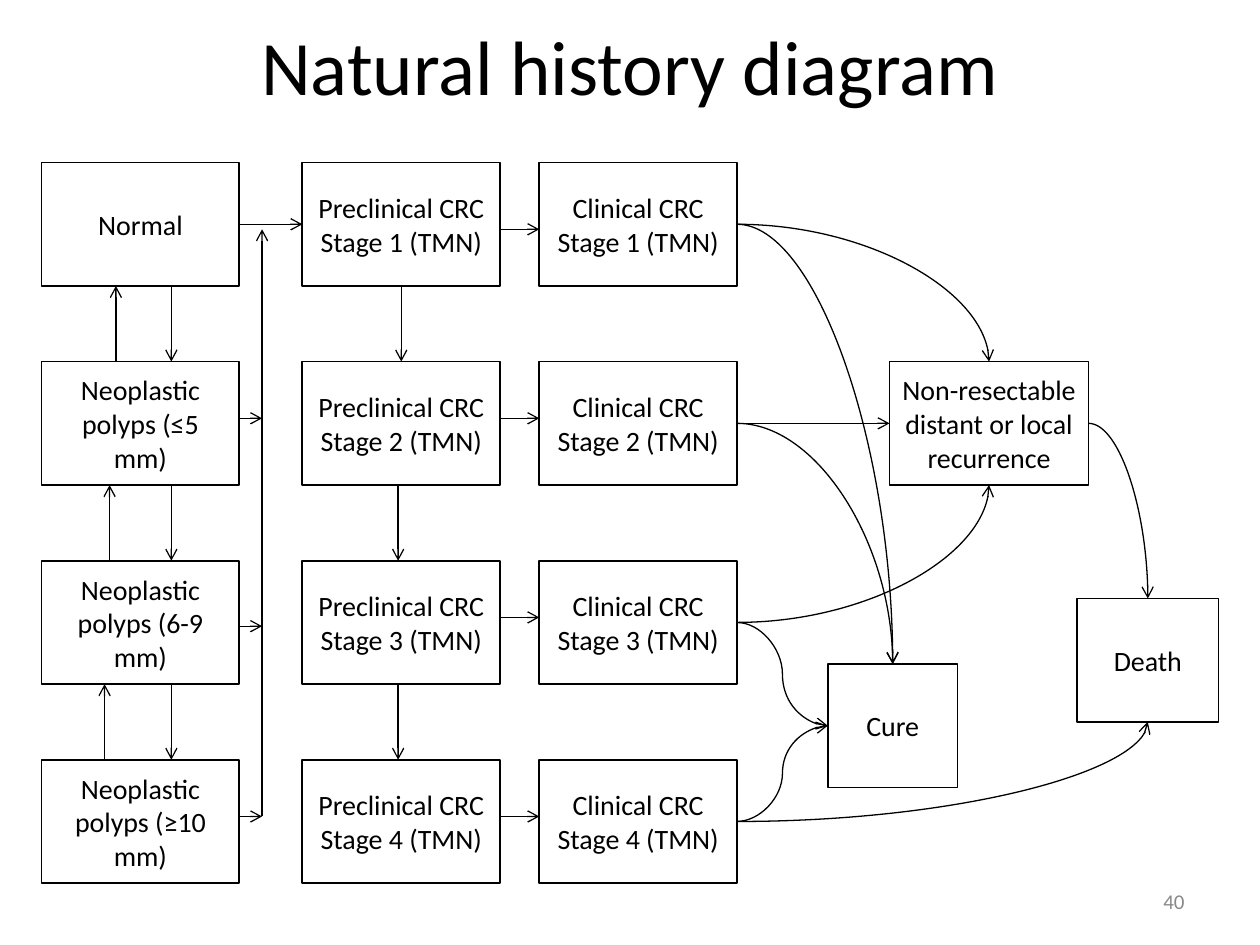
from lxml import etree
from pptx import Presentation
from pptx.dml.color import RGBColor
from pptx.enum.shapes import MSO_CONNECTOR, MSO_SHAPE
from pptx.enum.text import MSO_ANCHOR, PP_ALIGN
from pptx.oxml.ns import qn
from pptx.util import Inches, Pt

STRAIGHT = MSO_CONNECTOR.STRAIGHT
CURVE = MSO_CONNECTOR.CURVE
RECTANGLE = MSO_SHAPE.RECTANGLE
MIDDLE = MSO_ANCHOR.MIDDLE
CENTER = PP_ALIGN.CENTER
RIGHT = PP_ALIGN.RIGHT
TOP_SIDE, LEFT_SIDE, BOTTOM_SIDE, RIGHT_SIDE = range(4)

BLACK = "000000"
WHITE = "FFFFFF"
GREY = "898989"
STATE_WIDTH = 1.57
STATE_HEIGHT = 0.98
ROW_STEP = 1.58
COLUMN_STEP = 1.88


def color(value):
    return RGBColor.from_string(value)


def write_text(box, text, size, text_color=BLACK, align=CENTER):
    frame = box.text_frame
    frame.word_wrap = True
    frame.vertical_anchor = MIDDLE
    frame.text = text
    for para in frame.paragraphs:
        para.alignment = align
        for span in para.runs:
            span.font.name = "Calibri"
            span.font.size = Pt(size)
            span.font.color.rgb = color(text_color)


def add_label(page, area, text, size, text_color=BLACK, align=CENTER):
    box = page.shapes.add_textbox(*map(Inches, area))
    write_text(box, text, size, text_color, align)


def add_state(page, left, top, text, width=STATE_WIDTH):
    box = page.shapes.add_shape(
        RECTANGLE, Inches(left), Inches(top), Inches(width), Inches(STATE_HEIGHT)
    )
    box.shadow.inherit = False
    box.fill.solid()
    box.fill.fore_color.rgb = color(WHITE)
    box.line.color.rgb = color(BLACK)
    box.line.width = Pt(1)
    write_text(box, text, 16)
    return box


def add_arrow(page, start=(0, 0), end=(0, 0), kind=STRAIGHT):
    arrow = page.shapes.add_connector(kind, *map(Inches, (*start, *end)))
    arrow.line.color.rgb = color(BLACK)
    arrow.line.width = Pt(0.75)
    line = arrow.line._get_or_add_ln()
    etree.SubElement(line, qn("a:tailEnd"), type="arrow")
    etree.SubElement(arrow._element.spPr, qn("a:effectLst"))
    return arrow


def join(page, source, source_side, target, target_side, kind=STRAIGHT):
    arrow = add_arrow(page, kind=kind)
    arrow.begin_connect(source, source_side)
    arrow.end_connect(target, target_side)
    if kind == CURVE and target_side in (TOP_SIDE, BOTTOM_SIDE):
        geometry = arrow._element.spPr.find(qn("a:prstGeom"))
        geometry.set("prst", "curvedConnector2")


def build_polyps(page, left, top):
    names = [
        "Normal",
        "Neoplastic polyps (≤5 mm)",
        "Neoplastic polyps (6-9 mm)",
        "Neoplastic polyps (≥10 mm)",
    ]
    states = [
        add_state(page, left, top + row * ROW_STEP, name)
        for row, name in enumerate(names)
    ]
    for row, offset in enumerate((0.59, 0.54, 0.5)):
        upper = top + row * ROW_STEP + STATE_HEIGHT
        lower = top + (row + 1) * ROW_STEP
        add_arrow(page, (left + 1.03, upper), (left + 1.03, lower))
        add_arrow(page, (left + offset, lower), (left + offset, upper))

    trunk = left + 1.75
    for row, offset in enumerate((0.45, 0.52, 0.45), start=1):
        level = top + row * ROW_STEP + offset
        add_arrow(page, (left + STATE_WIDTH, level), (trunk, level))
    add_arrow(page, (trunk, level), (trunk, top + 0.53))
    return states


def build_cancer_stages(page, left, top):
    preclinical, clinical = [
        [
            add_state(
                page,
                left + column * COLUMN_STEP,
                top + row * ROW_STEP,
                f"{phase} CRC\nStage {row + 1} (TMN)",
            )
            for row in range(4)
        ]
        for column, phase in enumerate(("Preclinical", "Clinical"))
    ]
    for row, offset in enumerate((0.53, 0.45, 0.45, 0.45)):
        level = top + row * ROW_STEP + offset
        add_arrow(page, (left + STATE_WIDTH, level), (left + COLUMN_STEP, level))

    join(page, preclinical[0], BOTTOM_SIDE, preclinical[1], TOP_SIDE)
    for row in (1, 2):
        upper = top + row * ROW_STEP + STATE_HEIGHT
        lower = top + (row + 1) * ROW_STEP
        add_arrow(page, (left + 0.76, upper), (left + 0.76, lower))
    return preclinical, clinical


def build_outcomes(page, left, top):
    cure = add_state(page, left, top + 2.4, "Cure", 1.03)
    recurrence = add_state(
        page, left + 0.49, top, "Non-resectable distant or local recurrence", 1.58
    )
    recurrence.text_frame.margin_left = Inches(0.08)
    recurrence.text_frame.margin_right = Inches(0.08)
    death = add_state(page, left + 1.98, top + 1.88, "Death", 1.12)
    join(page, recurrence, RIGHT_SIDE, death, TOP_SIDE, CURVE)
    return cure, recurrence, death


def build_diagram(page, left, top):
    polyps = build_polyps(page, left, top)
    preclinical, clinical = build_cancer_stages(page, left + 2.07, top)
    cure, recurrence, death = build_outcomes(page, left + 6.24, top + ROW_STEP)

    join(page, polyps[0], RIGHT_SIDE, preclinical[0], LEFT_SIDE)
    join(page, clinical[1], RIGHT_SIDE, recurrence, LEFT_SIDE)
    for stage, target, side in (
        (0, recurrence, TOP_SIDE),
        (0, cure, TOP_SIDE),
        (1, cure, TOP_SIDE),
        (2, recurrence, BOTTOM_SIDE),
        (2, cure, LEFT_SIDE),
        (3, cure, LEFT_SIDE),
        (3, death, BOTTOM_SIDE),
    ):
        join(page, clinical[stage], RIGHT_SIDE, target, side, CURVE)


def main():
    deck = Presentation()
    deck.slide_width = Inches(10)
    deck.slide_height = Inches(7.5)
    page = deck.slides.add_slide(deck.slide_layouts[6])
    build_diagram(page, 0.33, 1.29)
    add_label(page, (0.5, 0.02, 9, 0.99), "Natural history diagram", 44)
    add_label(page, (7.17, 6.95, 2.33, 0.4), "40", 12, GREY, RIGHT)
    deck.save("out.pptx")


if __name__ == "__main__":
    main()
